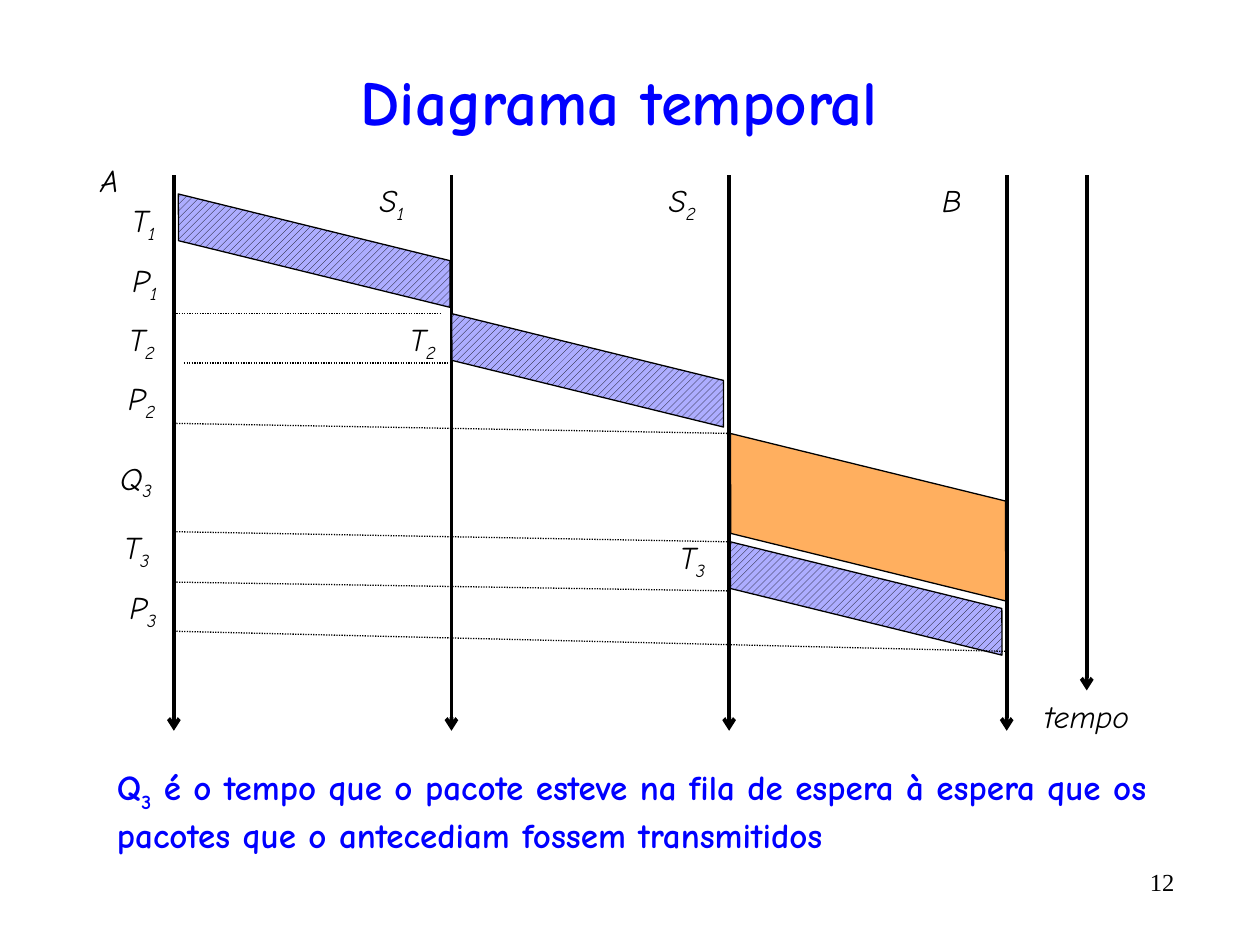
from pptx import Presentation
from pptx.dml.color import RGBColor
from pptx.enum.dml import MSO_LINE, MSO_PATTERN
from pptx.enum.shapes import MSO_CONNECTOR, MSO_SHAPE
from pptx.enum.text import MSO_ANCHOR, MSO_AUTO_SIZE, PP_ALIGN
from pptx.oxml.ns import qn
from pptx.util import Inches, Pt
from lxml import etree

FONT = "Comic Neue"
BLACK, BLUE, LILAC, ORANGE = "000000", "0000FF", "ADADFF", "FFAF5F"
SLOPE = 13.8  # degrees by which a packet leans over a hop


def color(hex_string):
    return RGBColor.from_string(hex_string)


def add_text(slide, box, runs, size, ink, align=PP_ALIGN.LEFT, font=FONT,
             bold=False, italic=False, wrap=True, anchor=MSO_ANCHOR.TOP):
    """Each run is a (text, is_subscript) pair."""
    frame = slide.shapes.add_textbox(*map(Inches, box)).text_frame
    frame.word_wrap = wrap
    frame.vertical_anchor = anchor
    if not wrap:
        frame.auto_size = MSO_AUTO_SIZE.SHAPE_TO_FIT_TEXT
    paragraph = frame.paragraphs[0]
    paragraph.alignment = align
    for text, subscript in runs:
        run = paragraph.add_run()
        run.text = text
        run.font.size = Pt(size)
        run.font.name = font
        run.font.bold = bold
        run.font.italic = italic
        run.font.color.rgb = color(ink)
        if subscript:
            run.font._element.set("baseline", "-25000")


def add_line(slide, start, end, width, dotted=False, arrow=False):
    line = slide.shapes.add_connector(
        MSO_CONNECTOR.STRAIGHT, *map(Inches, (*start, *end)))
    line.line.color.rgb = color(BLACK)
    line.line.width = Pt(width)
    if dotted:
        line.line.dash_style = MSO_LINE.ROUND_DOT
    if arrow:
        etree.SubElement(line.line._get_or_add_ln(), qn("a:tailEnd"), type="arrow")
    etree.SubElement(line._element.spPr, qn("a:effectLst"))


def add_label(slide, box, letter, index=""):
    runs = [(letter, False)] + ([(index, True)] if index else [])
    add_text(slide, box, runs, 18, BLACK, PP_ALIGN.CENTER, italic=True, wrap=False)


def add_packet(slide, box, fill, hatched):
    packet = slide.shapes.add_shape(MSO_SHAPE.PARALLELOGRAM, *map(Inches, box))
    packet.rotation = SLOPE
    packet._element.spPr.find(qn("a:xfrm")).set("flipH", "1")
    packet.shadow.inherit = False
    if hatched:
        packet.fill.patterned()
        packet.fill.pattern = MSO_PATTERN.WIDE_UPWARD_DIAGONAL
        packet.fill.fore_color.rgb = color(BLACK)
        packet.fill.back_color.rgb = color(fill)
    else:
        packet.fill.solid()
        packet.fill.fore_color.rgb = color(fill)
    packet.line.color.rgb = color(BLACK)
    packet.line.width = Pt(0.75)


def add_diagram(slide, left, top, width, height):
    """Left and right edges are the axes of A and B."""
    def place(x, y, *size):
        return (left + x, top + y, *size)

    hop = width / 3

    # Time axes of the four nodes
    for node in range(4):
        add_line(slide, place(node * hop, 0), place(node * hop, height),
                 2.25, arrow=True)

    # Node names
    for letter, index, x, y, w in [("A", "", -0.71, -0.16, 0.4),
                                   ("S", "1", 1.49, 0, 0.48),
                                   ("S", "2", 3.78, 0, 0.51),
                                   ("B", "", 5.98, 0, 0.39)]:
        add_label(slide, place(x, y, w, 0.4), letter, index)

    # The packet on each hop
    for x, y in [(-0.04, 0.42), (2.13, 1.37), (4.34, 3.18)]:
        add_packet(slide, place(x, y, 2.31, 0.36), LILAC, hatched=True)

    # Dotted limits of the delays
    for x1, y1, x2, y2 in [(0, 1.1, 2.12, 1.1),
                           (0.08, 1.49, hop, 1.49),
                           (0, 1.97, 2 * hop, 2.05),
                           (0, 2.83, 2 * hop, 2.91),
                           (0, 3.23, 2 * hop, 3.3),
                           (0, 3.62, width, 3.78)]:
        add_line(slide, place(x1, y1), place(x2, y2), 0.75, dotted=True)

    # Delay names, beside the axis of A and at the sending switches
    for letter, index, x, y, w in [("T", "1", -0.48, 0.16, 0.48),
                                   ("P", "1", -0.45, 0.63, 0.44),
                                   ("T", "2", -0.51, 1.1, 0.51),
                                   ("P", "2", -0.49, 1.57, 0.47),
                                   ("Q", "3", -0.58, 2.2, 0.56),
                                   ("T", "3", -0.55, 2.75, 0.51),
                                   ("P", "3", -0.48, 3.23, 0.47),
                                   ("T", "2", 1.72, 1.1, 0.51),
                                   ("T", "3", 3.86, 2.83, 0.51)]:
        add_label(slide, place(x, y, w, 0.4), letter, index)

    # Earlier packets that cause the queue
    add_packet(slide, place(4.29, 2.33, 2.44, 0.77), ORANGE, hatched=False)


def add_time_arrow(slide, left, top, width, height):
    middle = left + width / 2
    add_line(slide, (middle, top), (middle, top + height), 2.25, arrow=True)
    add_label(slide, (left, top + height, width, 0.4), "tempo")


def build_slide(prs):
    slide = prs.slides.add_slide(prs.slide_layouts[6])
    add_text(slide, (0.33, 0.42, 9.17, 0.75), [("Diagrama temporal", False)],
             36, BLUE, PP_ALIGN.CENTER, bold=True, anchor=MSO_ANCHOR.MIDDLE)
    add_diagram(slide, 1.38, 1.39, 6.61, 4.41)
    add_time_arrow(slide, 8.15, 1.39, 0.95, 4.09)
    add_text(slide, (0.83, 6.03, 8.58, 1.18),
             [("Q", False), ("3", True),
              (" é o tempo que o pacote esteve na fila de espera à espera que os "
               "pacotes que o antecediam fossem transmitidos", False)],
             20, BLUE, bold=True)
    add_text(slide, (8.42, 6.83, 1, 0.42), [("12", False)], 14, BLACK,
             PP_ALIGN.RIGHT, font="Times New Roman")


def main():
    prs = Presentation()
    prs.slide_width, prs.slide_height = Inches(10), Inches(7.5)
    build_slide(prs)
    prs.save("out.pptx")


if __name__ == "__main__":
    main()
